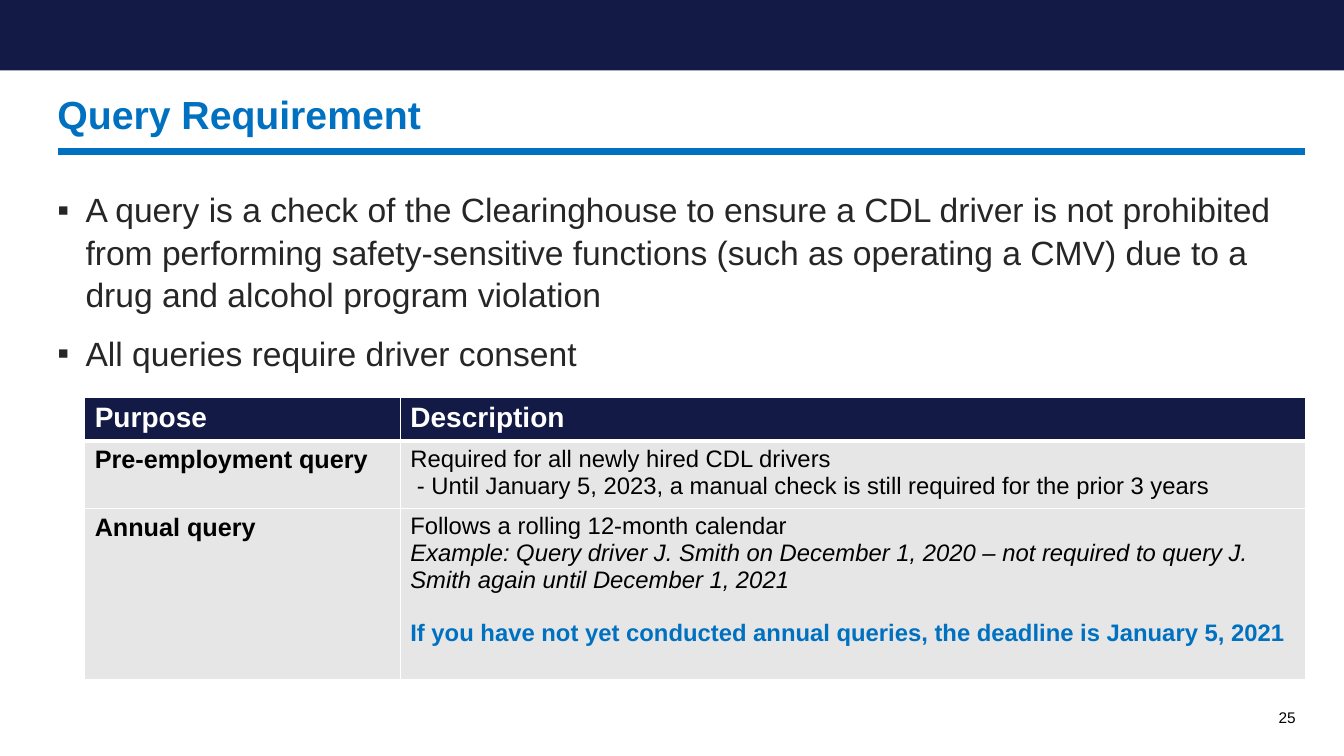
from dataclasses import dataclass

from lxml.etree import SubElement
from pptx import Presentation
from pptx.dml.color import RGBColor as Rgb
from pptx.enum.shapes import MSO_CONNECTOR as Conn, MSO_SHAPE as Shape
from pptx.enum.text import MSO_ANCHOR as Anchor, MSO_AUTO_SIZE as Auto, PP_ALIGN as Align
from pptx.oxml import parse_xml
from pptx.oxml.ns import nsdecls, qn
from pptx.util import Inches, Pt

HUES = {"navy": "121A45", "blue": "0070C0", "text": "262626",
        "black": "000000", "white": "FFFFFF", "gray": "E6E6E6"}


@dataclass
class Line:
    """A paragraph with its look."""
    text: str
    size: float
    hue: str = "black"
    bold: bool = False
    slant: bool = False
    gap: float = 0
    lead: float = 1
    mark: str = ""
    align: Align = Align.LEFT


@dataclass
class Row:
    """A table row with its height, fill and bottom border."""
    high: float
    fill: str
    edge: float
    cells: list[list[Line]]


ROWS = [
    Row(0.43, "navy", 3, [[Line("Purpose", 20, "white", True)],
                          [Line("Description", 20, "white", True)]]),
    Row(0.63, "gray", 1, [
        [Line("Pre-employment query", 18, bold=True)],
        [Line("Required for all newly hired CDL drivers", 17),
         Line(" - Until January 5, 2023, a manual check is still required for the prior 3 years", 17)]]),
    Row(1.7, "gray", 1, [
        [Line("Annual query", 18, bold=True)],
        [Line("Follows a rolling 12-month calendar", 17),
         Line("Example: Query driver J. Smith on December 1, 2020 – not required to query J. "
              "Smith again until December 1, 2021", 17, slant=True),
         Line("If you have not yet conducted annual queries, the deadline is January 5, 2021",
              17, "blue", True, gap=19)]]),
]
POINTS = [
    Line("A query is a check of the Clearinghouse to ensure a CDL driver is not prohibited from "
         "performing safety-sensitive functions (such as operating a CMV) due to a drug and "
         "alcohol program violation", 24, "text", lead=1.05, mark="▪"),
    Line("All queries require driver consent", 24, "text", gap=12, lead=1.05, mark="▪"),
]
COLS = [3.13, 8.98]


def color(hue: str) -> Rgb:
    """Return a named colour."""
    return Rgb.from_string(HUES[hue])


def write(frame, lines: list[Line], anchor: Anchor = Anchor.TOP) -> None:
    """Fill a text frame with lines."""
    frame.word_wrap = True
    frame.vertical_anchor = anchor
    for i, line in enumerate(lines):
        para = frame.add_paragraph() if i else frame.paragraphs[0]
        para.text = line.text
        para.alignment = line.align
        para.space_before = Pt(line.gap)
        para.line_spacing = line.lead
        if line.mark:
            prop = para._p.get_or_add_pPr()
            prop.set("marL", str(Inches(0.28)))
            prop.set("indent", str(-Inches(0.28)))
            SubElement(prop, qn("a:buFont"), typeface="Arial")
            SubElement(prop, qn("a:buChar"), char=line.mark)
        font = para.font
        font.name = "Arial"
        font.size = Pt(line.size)
        font.bold = line.bold
        font.italic = line.slant
        font.color.rgb = color(line.hue)


def place(shape, left: float, top: float, wide: float, high: float) -> None:
    """Set the box of a shape."""
    shape.left, shape.top = Inches(left), Inches(top)
    shape.width, shape.height = Inches(wide), Inches(high)


def border(cell, top: float, base: float) -> None:
    """Give a cell white borders."""
    prop = cell._tc.get_or_add_tcPr()
    for i, (side, size) in enumerate(zip("LRTB", (1, 1, top, base))):
        prop.insert(i, parse_xml(
            f'<a:ln{side} {nsdecls("a")} w="{Pt(size)}"><a:solidFill>'
            f'<a:srgbClr val="{HUES["white"]}"/></a:solidFill></a:ln{side}>'))


def grid(slide) -> None:
    """Draw the query table."""
    table = slide.shapes.add_table(len(ROWS), len(COLS), Inches(0.84), Inches(3.94),
                                   Inches(sum(COLS)), Inches(sum(r.high for r in ROWS))).table
    table.horz_banding = False
    for col, wide in zip(table.columns, COLS):
        col.width = Inches(wide)
    top = 1
    for i, row in enumerate(ROWS):
        table.rows[i].height = Inches(row.high)
        for j, lines in enumerate(row.cells):
            cell = table.cell(i, j)
            write(cell.text_frame, lines)
            cell.fill.solid()
            cell.fill.fore_color.rgb = color(row.fill)
            border(cell, top, row.edge)
        top = row.edge


def main() -> None:
    """Build and save the slide."""
    deck = Presentation()
    deck.slide_width, deck.slide_height = Inches(13.33), Inches(7.5)
    slide = deck.slides.add_slide(deck.slide_layouts[5])
    shapes = slide.shapes

    band = shapes.add_shape(Shape.RECTANGLE, 0, 0, deck.slide_width, Inches(0.7))
    band.shadow.inherit = False
    band.fill.solid()
    band.fill.fore_color.rgb = color("navy")
    band.line.fill.background()

    rule = shapes.add_connector(Conn.STRAIGHT, Inches(0.58), Inches(1.5),
                                Inches(12.94), Inches(1.5))
    rule.line.color.rgb = color("blue")
    rule.line.width = Pt(5)
    SubElement(rule._element.spPr, qn("a:effectLst"))

    title = shapes.title
    place(title, 0.47, 0.87, 12.47, 0.54)
    title.text_frame.auto_size = Auto.NONE
    write(title.text_frame, [Line("Query Requirement", 28, "blue", True)], Anchor.BOTTOM)

    body = shapes.add_textbox(0, 0, 0, 0)
    place(body, 0.47, 1.81, 12.47, 2)
    write(body.text_frame, POINTS)
    grid(slide)

    page = shapes.add_textbox(0, 0, 0, 0)
    place(page, 9.68, 6.92, 3.27, 0.4)
    write(page.text_frame, [Line("25", 11, align=Align.RIGHT)], Anchor.MIDDLE)
    deck.save("out.pptx")


if __name__ == "__main__":
    main()
